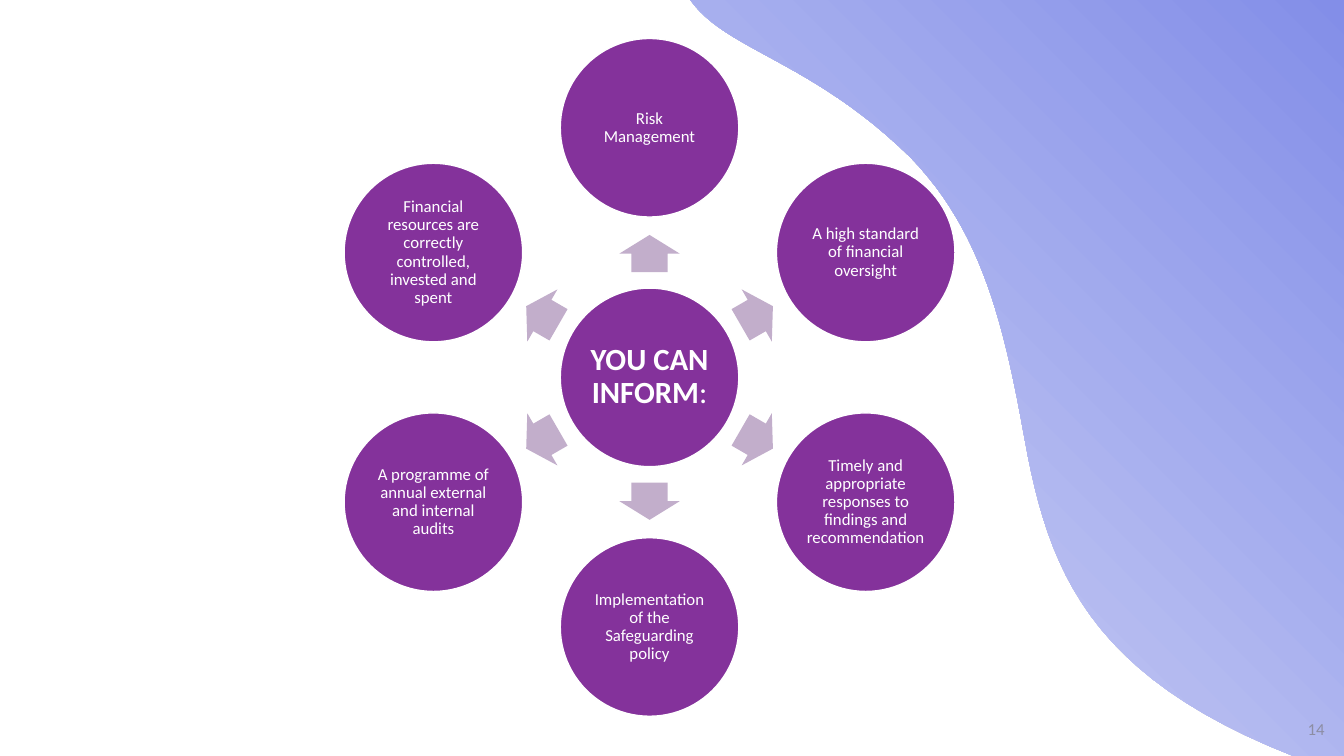
"""Build the radial "You can inform" slide with its lilac wave."""
import math
from typing import NamedTuple

from pptx import Presentation
from pptx import util as u
from pptx.dml.color import RGBColor
from pptx.enum import shapes, text

COLORS = {
    "circle": "84329B",
    "arrow": "C2AECB",
    "white": "FFFFFF",
    "number": "8C8DA3",
    "wave_light": "D4D8F6",
    "wave_dark": "838EE8",
}
FONT = "Calibri"
SLIDE_WIDTH, SLIDE_HEIGHT = 33.87, 19.05
CENTER_X, CENTER_Y = 16.37, 9.51
DIAMETER = 4.5
TOPIC_ORBIT, ARROW_ORBIT = 6.29, 3.12
ARROW_LENGTH, ARROW_WIDTH = 0.94, 1.52
CURVE_STEPS = 24


class Point(NamedTuple):
    x: float
    y: float


class Curve(NamedTuple):
    start: Point
    lead: Point
    trail: Point
    end: Point


class Span(NamedTuple):
    wording: str
    bold: bool = False


class Topic(NamedTuple):
    wording: str
    angle: int


WAVE_EDGE = [
    Curve(Point(17.4, 0), Point(18.29, 1.27), Point(20.45, 1.52), Point(22.94, 3.96)),
    Curve(Point(22.94, 3.96), Point(24.77, 5.84), Point(25.32, 8.26), Point(25.83, 11.1)),
    Curve(Point(25.83, 11.1), Point(26.42, 14.35), Point(27.43, 17.02), Point(32.59, SLIDE_HEIGHT)),
]
HEADING = [Span("YOU CAN INFORM", True), Span(":")]
TOPICS = [
    Topic(wording, -90 + 60 * index)
    for index, wording in enumerate([
        "Risk Management",
        "A high standard of financial oversight",
        "Timely and appropriate responses to findings and recommendation",
        "Implementation of the Safeguarding policy",
        "A programme of annual external and internal audits",
        "Financial resources are correctly controlled, invested and spent",
    ])
]


def color(name: str) -> RGBColor:
    return RGBColor.from_string(COLORS[name])


def curve_point(curve: Curve, t: float) -> Point:
    weights = ((1 - t) ** 3, 3 * t * (1 - t) ** 2, 3 * t**2 * (1 - t), t**3)
    return Point(
        sum(weight * point.x for weight, point in zip(weights, curve)),
        sum(weight * point.y for weight, point in zip(weights, curve)),
    )


def orbit_point(angle: float, radius: float) -> Point:
    turn = math.radians(angle)
    return Point(CENTER_X + radius * math.cos(turn), CENTER_Y + radius * math.sin(turn))


def add_wave(page) -> None:
    edge = [
        curve_point(curve, step / CURVE_STEPS)
        for curve in WAVE_EDGE
        for step in range(1, CURVE_STEPS + 1)
    ]
    corners = [Point(SLIDE_WIDTH, SLIDE_HEIGHT), Point(SLIDE_WIDTH, 0)]
    start = WAVE_EDGE[0].start
    builder = page.shapes.build_freeform(u.Cm(start.x), u.Cm(start.y))
    builder.add_line_segments([(u.Cm(point.x), u.Cm(point.y)) for point in edge + corners])
    wave = builder.convert_to_shape()
    wave.shadow.inherit = False
    wave.line.fill.background()
    wave.fill.gradient()
    wave.fill.gradient_angle = 45
    for stop, name in zip(wave.fill.gradient_stops, ("wave_light", "wave_dark")):
        stop.color.rgb = color(name)


def add_centered(page, kind, middle: Point, width: float, height: float, fill: str):
    shape = page.shapes.add_shape(
        kind,
        u.Cm(middle.x - width / 2),
        u.Cm(middle.y - height / 2),
        u.Cm(width),
        u.Cm(height),
    )
    shape.shadow.inherit = False
    shape.fill.solid()
    shape.fill.fore_color.rgb = color(fill)
    return shape


def write(box, spans: list[Span], size: float, ink: str, margin: float, anchor, align):
    frame = box.text_frame
    frame.word_wrap = True
    frame.vertical_anchor = anchor
    frame.margin_left = frame.margin_right = u.Cm(margin)
    frame.margin_top = frame.margin_bottom = u.Cm(margin)
    para = frame.paragraphs[0]
    para.alignment = align
    para.font.name = FONT
    para.font.size = u.Pt(size)
    para.font.color.rgb = color(ink)
    for span in spans:
        run = para.add_run()
        run.text = span.wording
        if span.bold:
            run.font.bold = True
    return para


def add_circle(page, middle: Point, spans: list[Span], size: float) -> None:
    circle = add_centered(page, shapes.MSO_SHAPE.OVAL, middle, DIAMETER, DIAMETER, "circle")
    circle.line.color.rgb = color("white")
    circle.line.width = u.Pt(1)
    para = write(circle, spans, size, "white", 0.05,
                 text.MSO_ANCHOR.MIDDLE, text.PP_ALIGN.CENTER)
    para.line_spacing = 0.9


def add_arrow(page, angle: int) -> None:
    arrow = add_centered(page, shapes.MSO_SHAPE.RIGHT_ARROW, orbit_point(angle, ARROW_ORBIT),
                         ARROW_LENGTH, ARROW_WIDTH, "arrow")
    arrow.line.fill.background()
    arrow.adjustments[0] = 0.6
    arrow.adjustments[1] = 0.5
    arrow.rotation = angle % 360


def add_page_number(page) -> None:
    box = page.shapes.add_textbox(u.Cm(25.76), u.Cm(17.6), u.Cm(7.62), u.Cm(1.02))
    write(box, [Span("14")], 12, "number", 0, text.MSO_ANCHOR.BOTTOM, text.PP_ALIGN.RIGHT)


def main() -> None:
    deck = Presentation()
    deck.slide_width, deck.slide_height = u.Cm(SLIDE_WIDTH), u.Cm(SLIDE_HEIGHT)
    page = deck.slides.add_slide(deck.slide_layouts[6])
    add_wave(page)
    add_page_number(page)
    add_circle(page, Point(CENTER_X, CENTER_Y), HEADING, 22)
    for topic in TOPICS:
        add_arrow(page, topic.angle)
        add_circle(page, orbit_point(topic.angle, TOPIC_ORBIT), [Span(topic.wording)], 12)
    deck.save("out.pptx")


if __name__ == "__main__":
    main()
